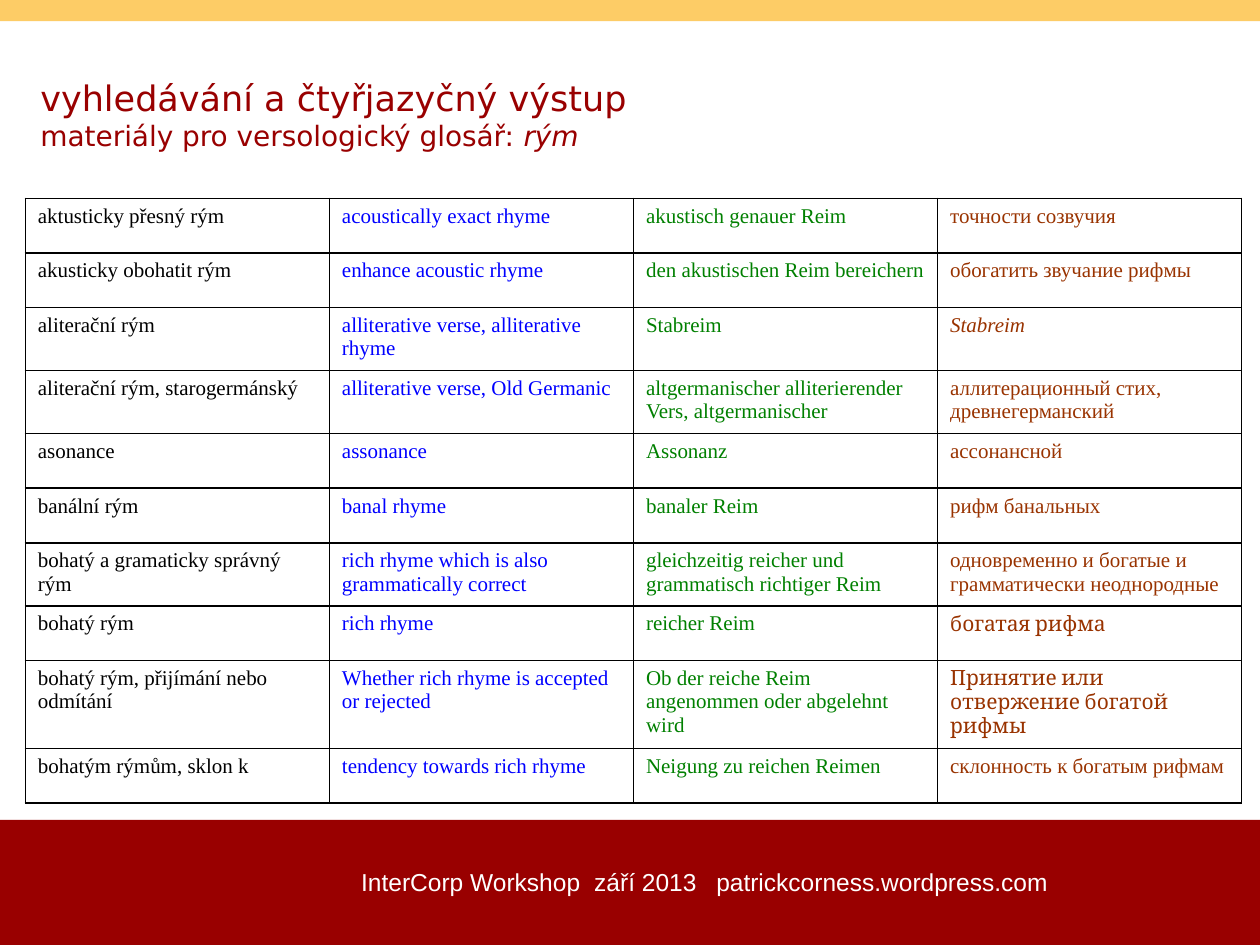
import pptx
import pptx.util
import pptx.dml.color
import pptx.enum.shapes
import pptx.enum.text
import pptx.oxml
import pptx.oxml.ns
from pptx.util import Cm

COLORS = {
    "red": "990000", "gold": "FDCC66", "white": "FFFFFF", "border": "000000",
    "czech": "000000", "english": "0000FF", "german": "008000", "russian": "993300",
}

# Content
HEADING = "vyhledávání a čtyřjazyčný výstup "
SUBHEADING = "materiály pro versologický glosář: "
TERM = "rým"
FOOTER = ["InterCorp Workshop", "září 2013", "patrickcorness.wordpress.com"]
FOOTER_TABS = [4.7, 7.16]  # cm from the text edge

LANGUAGES = ["czech", "english", "german", "russian"]
GLOSSARY = [
    ("aktusticky přesný rým", "acoustically exact rhyme",
     "akustisch genauer Reim", "точности созвучия"),
    ("akusticky obohatit rým", "enhance acoustic rhyme",
     "den akustischen Reim bereichern", "обогатить звучание рифмы"),
    ("aliterační rým", "alliterative verse, alliterative rhyme",
     "Stabreim", "Stabreim"),
    ("aliterační rým, starogermánský", "alliterative verse, Old Germanic",
     "altgermanischer alliterierender Vers, altgermanischer",
     "аллитерационный стих, древнегерманский"),
    ("asonance", "assonance", "Assonanz", "ассонансной"),
    ("banální rým", "banal rhyme", "banaler Reim", "рифм банальных"),
    ("bohatý a gramaticky správný rým",
     "rich rhyme which is also grammatically correct",
     "gleichzeitig reicher und grammatisch richtiger Reim",
     "одновременно и богатые и грамматически неоднородные"),
    ("bohatý rým", "rich rhyme", "reicher Reim", "богатая рифма"),
    ("bohatý rým, přijímání nebo odmítání",
     "Whether rich rhyme is accepted or rejected",
     "Ob der reiche Reim angenommen oder abgelehnt wird",
     "Принятие или отвержение богатой рифмы"),
    ("bohatým rýmům, sklon k", "tendency towards rich rhyme",
     "Neigung zu reichen Reimen", "склонность к богатым рифмам"),
]
ONE_LINE, TWO_LINES, THREE_LINES = 1.1, 1.27, 1.77  # row heights in cm
ROW_HEIGHTS = [ONE_LINE, ONE_LINE, TWO_LINES, TWO_LINES, ONE_LINE,
               ONE_LINE, TWO_LINES, ONE_LINE, THREE_LINES, ONE_LINE]
CAMBRIA_TERMS = {"богатая рифма", "Принятие или отвержение богатой рифмы"}
COLUMN_WIDTH = 6.13


def rgb(name):
    return pptx.dml.color.RGBColor.from_string(COLORS[name])


def style(run, font_name, size, color, italic=False):
    run.font.name = font_name
    run.font.size = pptx.util.Pt(size)
    run.font.color.rgb = rgb(color)
    run.font.italic = italic


def add_band(slide, top, height, color):
    band = slide.shapes.add_shape(pptx.enum.shapes.MSO_SHAPE.RECTANGLE,
                                  0, Cm(top), Cm(25.4), Cm(height))
    band.shadow.inherit = False
    band.fill.solid()
    band.fill.fore_color.rgb = rgb(color)
    band.line.fill.background()


def add_borders(cell):
    properties = cell._tc.get_or_add_tcPr()
    for side in ("lnL", "lnR", "lnT", "lnB"):
        properties.append(pptx.oxml.parse_xml(
            f'<a:{side} {pptx.oxml.ns.nsdecls("a")} w="12700"><a:solidFill>'
            f'<a:srgbClr val="{COLORS["border"]}"/></a:solidFill></a:{side}>'))


def add_title(slide):
    title = slide.shapes.title
    title.left, title.top, title.width, title.height = Cm(0.56), Cm(1.4), Cm(21.49), Cm(1.8)
    frame = title.text_frame
    frame.word_wrap = True
    frame.auto_size = pptx.enum.text.MSO_AUTO_SIZE.SHAPE_TO_FIT_TEXT
    frame.vertical_anchor = pptx.enum.text.MSO_ANCHOR.MIDDLE
    frame.text = HEADING
    paragraph = frame.paragraphs[0]
    paragraph.alignment = pptx.enum.text.PP_ALIGN.LEFT
    style(paragraph.runs[0], "DejaVu Sans", 20, "red")
    paragraph.add_line_break()
    for text, italic in ((SUBHEADING, False), (TERM, True)):
        run = paragraph.add_run()
        run.text = text
        style(run, "DejaVu Sans", 16, "red", italic)


def add_footer(slide):
    footer = slide.shapes.add_textbox(Cm(6.53), Cm(17.35), Cm(15.39), Cm(1.45))
    frame = footer.text_frame
    frame.word_wrap = True
    frame.margin_left = Cm(0.75)
    frame.text = "\t".join(FOOTER)
    paragraph = frame.paragraphs[0]
    stops = "".join(f'<a:tab pos="{Cm(stop)}" algn="l"/>' for stop in FOOTER_TABS)
    paragraph._p.get_or_add_pPr().append(pptx.oxml.parse_xml(
        f'<a:tabLst {pptx.oxml.ns.nsdecls("a")}>{stops}</a:tabLst>'))
    for run in paragraph.runs:
        style(run, "Arial", 14, "white")


def add_glossary(slide):
    glossary = slide.shapes.add_table(
        len(GLOSSARY), len(LANGUAGES), Cm(0.51), Cm(4),
        Cm(COLUMN_WIDTH * len(LANGUAGES)), Cm(sum(ROW_HEIGHTS))).table
    glossary.first_row = glossary.horz_banding = False
    for column in glossary.columns:
        column.width = Cm(COLUMN_WIDTH)
    for row, height, terms in zip(glossary.rows, ROW_HEIGHTS, GLOSSARY):
        row.height = Cm(height)
        for cell, language, term in zip(row.cells, LANGUAGES, terms):
            cell.text = term
            font_name = "Cambria" if term in CAMBRIA_TERMS else "Times New Roman"
            # The German loanword is italic in the Russian column
            italic = language == "russian" and term == "Stabreim"
            style(cell.text_frame.paragraphs[0].runs[0], font_name, 12, language, italic)
            add_borders(cell)
            cell.fill.background()


def main():
    deck = pptx.Presentation()
    deck.slide_width, deck.slide_height = Cm(25.4), Cm(19.05)
    slide = deck.slides.add_slide(deck.slide_layouts[5])

    # Bottom and top bands
    add_band(slide, 16.53, 2.52, "red")
    add_band(slide, 0, 0.43, "gold")

    add_footer(slide)
    add_title(slide)
    add_glossary(slide)
    deck.save("out.pptx")


if __name__ == "__main__":
    main()
